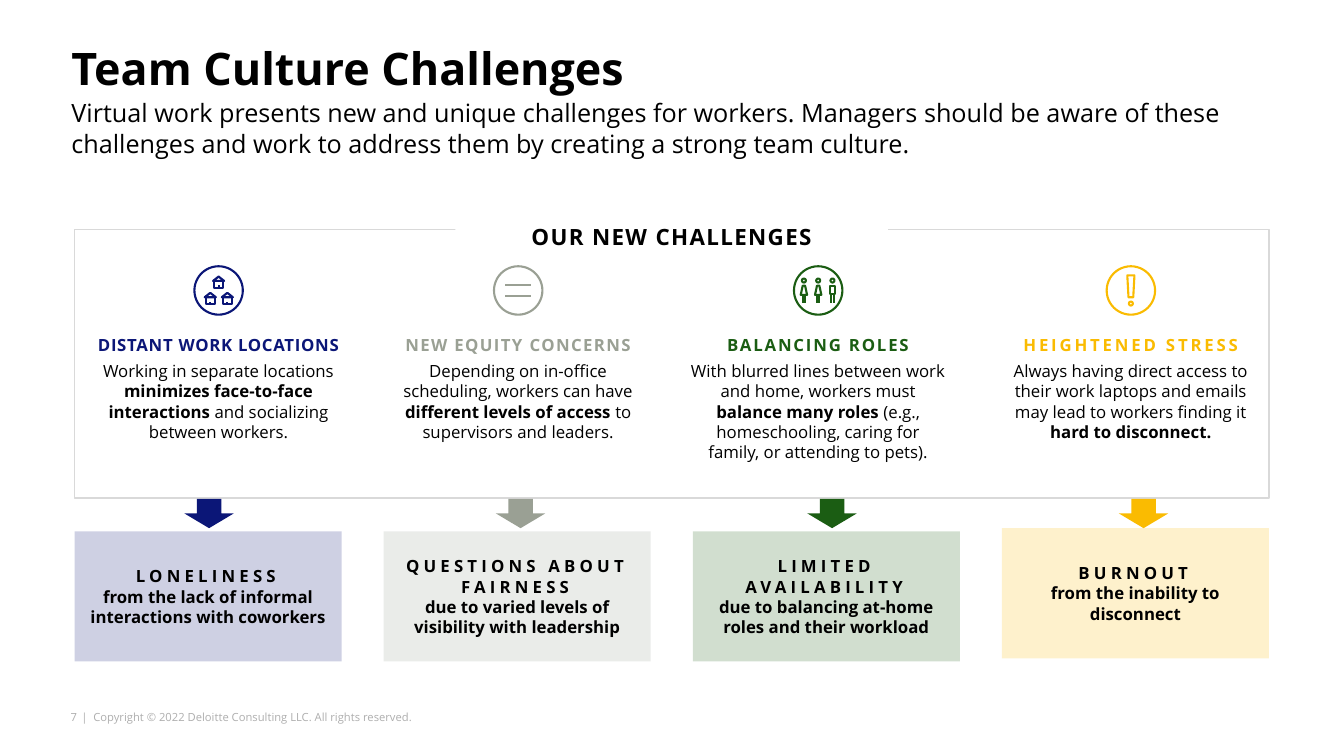
from dataclasses import dataclass

from lxml import etree
from pptx import Presentation
from pptx import util as u
from pptx.dml.color import RGBColor
from pptx.enum import shapes, text
from pptx.oxml.ns import qn

Cm, Pt = u.Cm, u.Pt
SHAPE, ALIGN = shapes.MSO_SHAPE, text.PP_ALIGN


@dataclass(frozen=True)
class Theme:
    font: str = "Open Sans"
    ink: str = "000000"
    paper: str = "FFFFFF"
    border: str = "D9D9D9"
    muted: str = "AEAEAE"
    navy: str = "0B1677"
    grey: str = "9AA094"
    green: str = "1B5D13"
    amber: str = "FABB01"
    title: float = 32
    lead: float = 18
    banner: float = 16
    prose: float = 12
    footer: float = 8
    stroke: float = 1.5


class SlideKit:
    def __init__(self, slide, theme):
        self.slide, self.theme = slide, theme

    def typeset(self, frame, runs, size, color, align=ALIGN.LEFT, margin=None, wrap=True):
        frame.word_wrap = wrap
        frame.auto_size = text.MSO_AUTO_SIZE.NONE
        if margin is not None:
            frame.margin_left = frame.margin_right = Cm(margin)
            frame.margin_top = frame.margin_bottom = Cm(margin)
        line = frame.paragraphs[0]
        line.alignment = align
        for words, bold, tracking in runs:
            if words == "\v":
                line.add_line_break()
                etree.SubElement(line._p[-1], qn("a:rPr"), sz=str(size * 100))
                continue
            run = line.add_run()
            run.text = words
            run.font.name, run.font.size, run.font.bold = self.theme.font, Pt(size), bold
            run.font.color.rgb = RGBColor.from_string(color)
            if tracking:
                run.font._element.set("spc", str(int(tracking * 100)))
        return line

    def placeholder(self, index, box, words, size, bold=False):
        holder = self.slide.placeholders[index]
        holder.left, holder.top, holder.width, holder.height = map(Cm, box)
        holder.text_frame.vertical_anchor = text.MSO_ANCHOR.TOP
        line = self.typeset(holder.text_frame, [(words, bold, 0)], size, self.theme.ink, margin=0)
        line.space_before = Pt(0)
        properties = line._p.get_or_add_pPr()
        properties.set("marL", "0")
        properties.set("indent", "0")
        etree.SubElement(properties, qn("a:buNone"))
        return line

    def label(self, box, runs, size, color, **style):
        frame = self.slide.shapes.add_textbox(*map(Cm, box)).text_frame
        self.typeset(frame, runs, size, color, **style)

    def paint(self, shape, fill=None, line=None, weight=1, opacity=None):
        shape.shadow.inherit = False
        if fill:
            shape.fill.solid()
            shape.fill.fore_color.rgb = RGBColor.from_string(fill)
            if opacity:
                tint = shape._element.spPr.find(qn("a:solidFill"))[0]
                etree.SubElement(tint, qn("a:alpha"), val=str(opacity * 1000))
        else:
            shape.fill.background()
        if line:
            shape.line.color.rgb = RGBColor.from_string(line)
            shape.line.width = Pt(weight)
        else:
            shape.line.fill.background()
        return shape

    def block(self, kind, box, **paint):
        return self.paint(self.slide.shapes.add_shape(kind, *map(Cm, box)), **paint)

    def ring(self, x, y, diameter, color):
        box = (x - diameter / 2, y - diameter / 2, diameter, diameter)
        self.block(SHAPE.OVAL, box, line=color, weight=self.theme.stroke)

    def outline(self, x, y, contours, color):
        builder = None
        for points, closed in contours:
            if builder is None:
                builder = self.slide.shapes.build_freeform(*points[0], scale=Cm(0.01))
            else:
                builder.move_to(*points[0])
            builder.add_line_segments(points[1:], close=closed)
        drawing = builder.convert_to_shape(Cm(x), Cm(y))
        self.paint(drawing, line=color, weight=self.theme.stroke)

    def stroke(self, x1, y1, x2, y2, color):
        bar = self.slide.shapes.add_connector(
            shapes.MSO_CONNECTOR.STRAIGHT, *map(Cm, (x1, y1, x2, y2)))
        bar.line.color.rgb = RGBColor.from_string(color)
        bar.line.width = Pt(self.theme.stroke)
        etree.SubElement(bar._element.spPr, qn("a:effectLst"))


HOUSE = [([(3, 14), (17, 3), (31, 14)], True),
         ([(6, 14), (6, 32), (28, 32), (28, 14)], False),
         ([(17, 32), (17, 25)], False)]
WOMAN = [([(-3, 3), (3, 3), (8, 26), (-8, 26)], True),
         ([(-3, 26), (-3, 46)], False), ([(3, 26), (3, 46)], False)]
MAN = [([(-7, 3), (7, 3), (7, 23), (-7, 23)], True),
       ([(-4, 23), (-4, 46)], False), ([(4, 23), (4, 46)], False)]
EXCLAMATION = [([(-9, 3), (9, 3), (6, 58), (-6, 58)], True)]


def houses_icon(kit, x, y, color):
    for dx, dy in ((-0.38, 0.03), (0.05, 0.03), (-0.17, -0.38)):
        kit.outline(x + dx, y + dy, HOUSE, color)


def equality_icon(kit, x, y, color):
    for dy in (-0.13, 0.13):
        kit.stroke(x - 0.33, y + dy, x + 0.33, y + dy, color)


def people_icon(kit, x, y, color):
    for dx, person in ((-0.36, WOMAN), (0, WOMAN), (0.36, MAN)):
        kit.ring(x + dx, y - 0.25, 0.1, color)
        kit.outline(x + dx, y - 0.15, person, color)


def alert_icon(kit, x, y, color):
    kit.outline(x, y - 0.41, EXCLAMATION, color)
    kit.ring(x, y + 0.33, 0.1, color)


def main():
    theme = Theme()
    deck = Presentation()
    deck.slide_width, deck.slide_height = Cm(33.87), Cm(19.05)
    kit = SlideKit(deck.slides.add_slide(deck.slide_layouts[1]), theme)

    heading = kit.placeholder(0, (1.8, 1.17, 28.37, 1.65), "Team Culture Challenges", theme.title, True)
    heading.line_spacing = 0.9
    kit.placeholder(1, (1.8, 2.46, 29.06, 1.55),
                    "Virtual work presents new and unique challenges for workers. Managers should be aware "
                    "of these challenges and work to address them by creating a strong team culture.", theme.lead)
    kit.label((1.78, 17.91, 8.86, 0.33),
              [("7", False, 0), (" | ", False, 1), ("Copyright © 2022 Deloitte Consulting LLC. All rights reserved.", False, 0)],
              theme.footer, theme.muted, margin=0, wrap=False)

    kit.block(SHAPE.RECTANGLE, (1.88, 5.79, 30.1, 6.76), fill=theme.paper, line=theme.border)
    banner = kit.block(SHAPE.RECTANGLE, (11.48, 5.49, 10.9, 0.94), fill=theme.paper)
    kit.typeset(banner.text_frame, [("OUR NEW CHALLENGES", True, 1)], theme.banner, theme.ink, ALIGN.CENTER)

    challenges = [
        (theme.navy, 5.51, houses_icon, "DISTANT WORK LOCATIONS", 0.5, 6.65, 6.98,
         ("Working in separate locations ", "minimizes face-to-face interactions", " and socializing between workers."),
         13.39, "LONELINESS", "from the lack of informal interactions with coworkers"),
        (theme.grey, 13.06, equality_icon, "NEW EQUITY CONCERNS", 1, 6.3, 6.35,
         ("Depending on in-office scheduling, workers can have ", "different levels of access ",
          "to supervisors and leaders."),
         13.39, "QUESTIONS ABOUT FAIRNESS", "due to varied levels of visibility with leadership"),
        (theme.green, 20.62, people_icon, "BALANCING ROLES", 1.3, 5.33, 6.98,
         ("With blurred lines between work and home, workers must ", "balance many roles ",
          "(e.g., homeschooling, caring for family, or attending to pets)."),
         13.39, "LIMITED AVAILABILITY", "due to balancing at-home roles and their workload"),
        (theme.amber, 28.5, alert_icon, "HEIGHTENED STRESS", 2, 6.05, 6.98,
         ("Always having direct access to their work laptops and emails may lead to workers finding it ",
          "hard to disconnect."),
         13.31, "BURNOUT", "from the inability to disconnect"),
    ]
    for column, (color, center, icon, name, tracking, name_width, story_width,
                 story, outcome_top, outcome, cause) in enumerate(challenges):
        kit.ring(center, 7.32, 1.22, color)
        icon(kit, center, 7.32, color)
        kit.label((center - name_width / 2, 8.31, name_width, 0.76), [(name, True, tracking)],
                  theme.prose, color, align=ALIGN.CENTER, wrap=False)
        kit.label((center - story_width / 2, 8.97, story_width, 2.31),
                  [(part, order == 1, 0) for order, part in enumerate(story)],
                  theme.prose, theme.ink, align=ALIGN.CENTER)
        kit.block(SHAPE.DOWN_ARROW, (4.65 + column * 7.85, 12.57, 1.24, 0.74), fill=color)
        result = kit.block(SHAPE.RECTANGLE, (1.88 + column * 7.79, outcome_top, 6.73, 3.28), fill=color, opacity=20)
        kit.typeset(result.text_frame, [(outcome, True, 3), ("\v", True, 0), (cause, True, 0)],
                    theme.prose, theme.ink, ALIGN.CENTER)

    deck.save("out.pptx")


if __name__ == "__main__":
    main()
